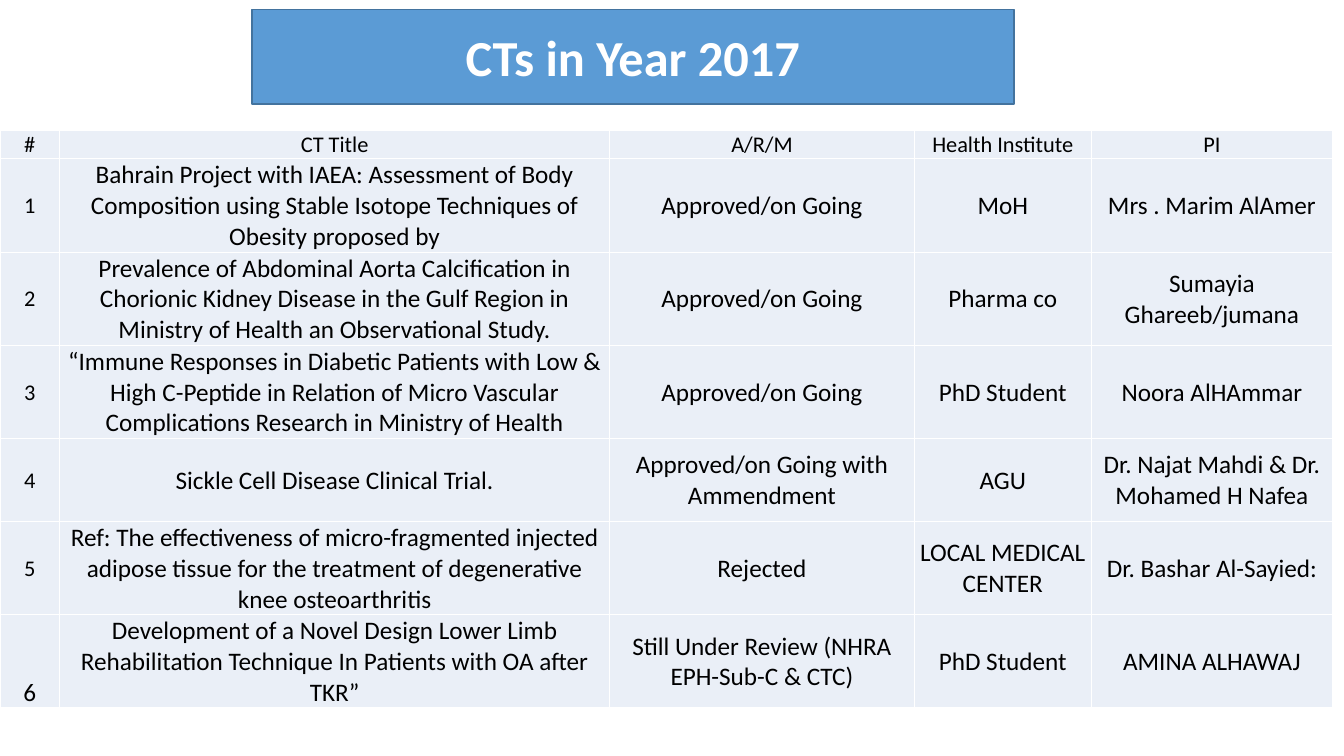
from dataclasses import dataclass

from lxml.etree import SubElement
from pptx import Presentation
from pptx.dml.color import RGBColor
from pptx.enum.shapes import MSO_SHAPE
from pptx.enum.text import MSO_ANCHOR, PP_ALIGN
from pptx.oxml.ns import qn
from pptx.util import Pt


@dataclass(frozen=True)
class Theme:
    font: str = "Calibri"
    banner_fill: str = "5B9BD5"
    banner_line: str = "43739E"
    cell_fill: str = "EAEFF7"
    white: str = "FFFFFF"
    black: str = "000000"
    title_size: int = 36
    body_size: int = 18
    small_size: int = 16


THEME = Theme()

HEADINGS = ["#", "CT Title", "A/R/M", "Health Institute", "PI"]
TRIALS = [
    ("Bahrain Project with IAEA: Assessment of Body Composition using Stable "
     "Isotope Techniques of Obesity proposed by",
     "Approved/on Going", "MoH", "Mrs . Marim AlAmer"),
    ("Prevalence of Abdominal Aorta Calcification in Chorionic Kidney Disease "
     "in the Gulf Region in Ministry of Health an Observational Study.",
     "Approved/on Going", "Pharma co", "Sumayia Ghareeb/jumana"),
    ("“Immune Responses in Diabetic Patients with Low & High C-Peptide in "
     "Relation of Micro Vascular Complications Research in Ministry of Health",
     "Approved/on Going", "PhD Student", "Noora AlHAmmar"),
    ("Sickle Cell Disease Clinical Trial.",
     "Approved/on Going with Ammendment", "AGU",
     "Dr. Najat Mahdi & Dr. Mohamed H Nafea"),
    ("Ref: The effectiveness of micro-fragmented injected adipose tissue for "
     "the treatment of degenerative knee osteoarthritis",
     "Rejected", "LOCAL MEDICAL CENTER", "Dr. Bashar Al-Sayied:"),
    ("Development of a Novel Design Lower Limb Rehabilitation Technique In "
     "Patients with OA after TKR”",
     "Still Under Review (NHRA EPH-Sub-C & CTC)", "PhD Student",
     "AMINA ALHAWAJ"),
]
COLUMN_WIDTHS = [42.5, 393.1, 217.4, 126.7, 172.1]
ROW_HEIGHTS = [19.4, 65.6, 65.6, 65.6, 59.2, 65.6, 65.6]


def rgb(color):
    return RGBColor.from_string(color)


def write(frame, text, size=THEME.body_size, color=THEME.black, bold=False):
    """Put one centred paragraph into a text frame."""
    paragraph = frame.paragraphs[0]
    paragraph.alignment = PP_ALIGN.CENTER
    run = paragraph.add_run()
    run.text = text
    run.font.name = THEME.font
    run.font.size = Pt(size)
    run.font.bold = bold
    run.font.color.rgb = rgb(color)


def set_borders(cell, color, width):
    properties = cell._tc.get_or_add_tcPr()
    for side in ("a:lnL", "a:lnR", "a:lnT", "a:lnB"):
        border = SubElement(properties, qn(side), w=str(Pt(width)))
        fill = SubElement(border, qn("a:solidFill"))
        SubElement(fill, qn("a:srgbClr"), val=color)


def style_cell(cell, anchor):
    set_borders(cell, THEME.white, 1)
    cell.fill.solid()
    cell.fill.fore_color.rgb = rgb(THEME.cell_fill)
    cell.margin_left = cell.margin_right = cell.margin_top = Pt(0.7)
    cell.margin_bottom = Pt(0)
    cell.vertical_anchor = anchor


def add_banner(slide, left, top, width, height):
    banner = slide.shapes.add_shape(
        MSO_SHAPE.RECTANGLE, Pt(left), Pt(top), Pt(width), Pt(height))
    banner.shadow.inherit = False
    banner.fill.solid()
    banner.fill.fore_color.rgb = rgb(THEME.banner_fill)
    banner.line.color.rgb = rgb(THEME.banner_line)
    banner.line.width = Pt(1)
    banner.text_frame.word_wrap = True
    banner.text_frame.vertical_anchor = MSO_ANCHOR.MIDDLE
    write(banner.text_frame, "CTs in Year 2017", size=THEME.title_size,
          color=THEME.white, bold=True)


def add_trials_table(slide, left, top):
    rows = [HEADINGS] + [(str(n), *trial) for n, trial in enumerate(TRIALS, 1)]
    trials = slide.shapes.add_table(
        len(rows), len(HEADINGS), Pt(left), Pt(top),
        Pt(sum(COLUMN_WIDTHS)), Pt(sum(ROW_HEIGHTS))).table
    trials.first_row = trials.horz_banding = False
    for column, width in zip(trials.columns, COLUMN_WIDTHS):
        column.width = Pt(width)
    for row, height in zip(trials.rows, ROW_HEIGHTS):
        row.height = Pt(height)

    last = len(rows) - 1
    for r, values in enumerate(rows):
        for c, value in enumerate(values):
            # The headings and the last number sit at the bottom
            last_number = r == last and c == 0
            at_bottom = r == 0 or last_number
            small = r == 0 or (c == 0 and not last_number)
            cell = trials.cell(r, c)
            style_cell(cell, MSO_ANCHOR.BOTTOM if at_bottom else MSO_ANCHOR.MIDDLE)
            write(cell.text_frame, value,
                  size=THEME.small_size if small else THEME.body_size)


def main():
    deck = Presentation()
    deck.slide_width, deck.slide_height = Pt(960), Pt(540)
    slide = deck.slides.add_slide(deck.slide_layouts[6])
    add_trials_table(slide, 0, 93.2)
    add_banner(slide, 180, 6.6, 544.4, 67.8)
    deck.save("out.pptx")


if __name__ == "__main__":
    main()
